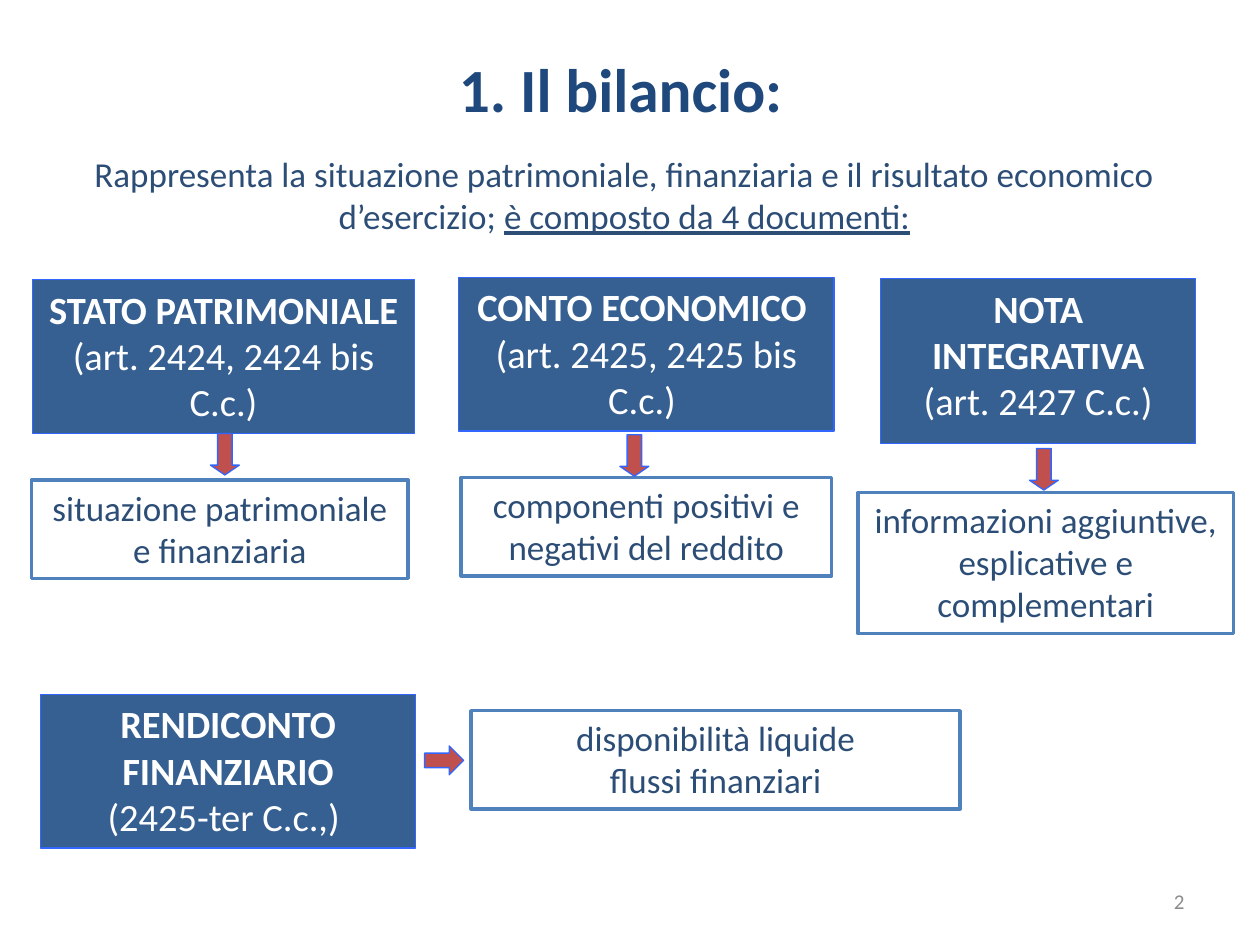
from dataclasses import dataclass

from pptx import Presentation
from pptx.dml.color import RGBColor
from pptx.enum.shapes import MSO_SHAPE as Shape
from pptx.enum.text import MSO_ANCHOR as Anchor, PP_ALIGN as Align
from pptx.util import Inches, Pt


@dataclass(frozen=True)
class Theme:
    font: str = "Calibri"
    title: str = "1F497D"
    body: str = "2C4D76"
    header: str = "376092"
    header_line: str = "3366FF"
    box_line: str = "4F81BD"
    arrow: str = "C0504D"
    white: str = "FFFFFF"
    muted: str = "8C8C8C"
    title_size: float = 35.1
    header_size: float = 22
    body_size: float = 20
    number_size: float = 12


T = Theme()


def rgb(value):
    return RGBColor.from_string(value)


def add_run(p, text, size=T.body_size, color=T.body, bold=False, underline=False):
    r = p.add_run()
    r.text = text
    f = r.font
    f.name, f.size, f.bold, f.underline = T.font, Pt(size), bold, underline
    f.color.rgb = rgb(color)


def write(sp, paragraphs, align=Align.CENTER, anchor=Anchor.TOP):
    """Fill a shape with paragraphs, each a list of (text, format) runs."""
    tf = sp.text_frame
    tf.word_wrap = True
    tf.vertical_anchor = anchor
    for i, runs in enumerate(paragraphs):
        p = tf.paragraphs[0] if i == 0 else tf.add_paragraph()
        p.alignment = align
        for text, style in runs:
            add_run(p, text, **style)


def add_text(s, box, runs, **layout):
    write(s.shapes.add_textbox(*map(Inches, box)), [runs], **layout)


def add_block(s, kind, box, fill, line, width):
    sp = s.shapes.add_shape(kind, *map(Inches, box))
    sp.shadow.inherit = False
    sp.fill.solid()
    sp.fill.fore_color.rgb = rgb(fill)
    sp.line.color.rgb = rgb(line)
    sp.line.width = Pt(width)
    return sp


def add_header(s, box, name, article):
    sp = add_block(s, Shape.RECTANGLE, box, T.header, T.header_line, 0.75)
    style = dict(size=T.header_size, color=T.white)
    write(sp, [[(name, dict(style, bold=True))], [(article, style)]])


def add_detail(s, box, *lines):
    sp = add_block(s, Shape.RECTANGLE, box, T.white, T.box_line, 2)
    write(sp, [[(line, {})] for line in lines])


def add_arrow(s, kind, box, head=0.5):
    sp = add_block(s, kind, box, T.arrow, T.header_line, 0.75)
    sp.adjustments[0], sp.adjustments[1] = 0.5, head


def add_document(s, header_box, name, article, arrow_at, detail_box, detail):
    """A document header with an arrow down to what it describes."""
    add_header(s, header_box, name, article)
    add_detail(s, detail_box, detail)
    add_arrow(s, Shape.DOWN_ARROW, (*arrow_at, 0.23, 0.33), head=0.34)


def add_cash_flow(s, left, top):
    add_header(s, (left, top, 2.98, 1.22), "RENDICONTO FINANZIARIO", "(2425-ter C.c.,) ")
    add_arrow(s, Shape.RIGHT_ARROW, (left + 3.05, top + 0.41, 0.31, 0.23))
    add_detail(s, (left + 3.42, top + 0.13, 3.88, 0.78),
               "disponibilità liquide", "flussi finanziari")


DOCUMENTS = [
    ((0.26, 2.22, 3.03, 1.22), "STATO PATRIMONIALE ", "(art. 2424, 2424 bis C.c.)",
     (1.67, 3.44), (0.25, 3.81, 2.99, 0.78), "situazione patrimoniale e finanziaria"),
    ((3.64, 2.2, 2.98, 1.22), "CONTO ECONOMICO ", "(art. 2425, 2425 bis C.c.) ",
     (4.92, 3.45), (3.66, 3.79, 2.94, 0.78), "componenti positivi e negativi del reddito"),
    ((6.99, 2.21, 2.5, 1.31), "NOTA INTEGRATIVA", "(art. 2427 C.c.)",
     (8.17, 3.56), (6.81, 3.91, 2.98, 1.12),
     "informazioni aggiuntive, esplicative e complementari"),
]


def main():
    prs = Presentation()
    prs.slide_width, prs.slide_height = Inches(10), Inches(7.5)
    s = prs.slides.add_slide(prs.slide_layouts[6])

    add_text(s, (0.2, -0.27, 9.45, 1.93),
             [("1. Il bilancio:", dict(size=T.title_size, color=T.title, bold=True))],
             anchor=Anchor.MIDDLE)
    add_text(s, (0.27, 1.16, 9.37, 0.77), [
        ("Rappresenta la situazione patrimoniale, finanziaria e il risultato "
         "economico d’esercizio; ", {}),
        ("è composto da 4 documenti:", dict(underline=True)),
    ])
    for document in DOCUMENTS:
        add_document(s, *document)
    add_cash_flow(s, 0.32, 5.51)
    add_text(s, (7.17, 6.95, 2.33, 0.4),
             [("2", dict(size=T.number_size, color=T.muted))],
             align=Align.RIGHT, anchor=Anchor.MIDDLE)
    prs.save("out.pptx")


if __name__ == "__main__":
    main()
